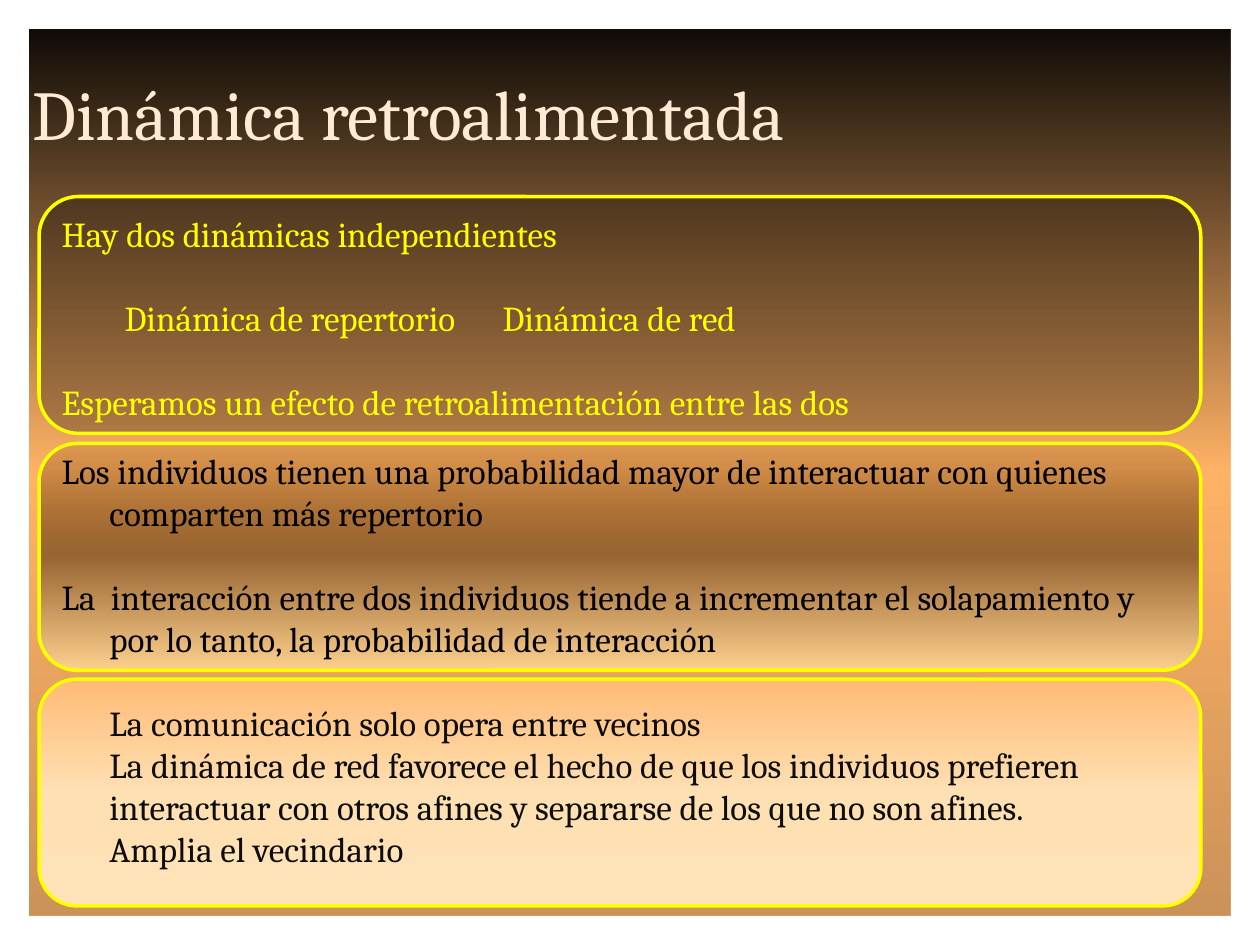
from lxml.etree import SubElement
from pptx import Presentation
from pptx.dml.color import RGBColor
from pptx.enum.shapes import MSO_SHAPE
from pptx.enum.text import MSO_ANCHOR
from pptx.oxml.ns import qn
from pptx.util import Emu, Pt

WIDTH, HEIGHT = 1000, 750
YELLOW, BLACK, INK = "FFFF00", "000000", "0D0D0D"
BACKGROUND = [(0, "000000", 100), (50, "FFB265", 100), (100, "C89058", 100)]
PANELS = [
    ((31, 539, 922, 180), [(0, "FFBA75", 100), (50, "FFE0B3", 100), (100, "FFE2B7", 100)]),
    ((31, 352, 922, 180), [(0, "663300", 13), (50, "996633", 100), (100, "FFD28F", 100)]),
    ((31, 156, 922, 188), [(0, "000000", 26), (100, "000000", 26)]),
]
HANGING, INDENTED = (38, -38), (38, 0)
BODY = [
    ("Hay dos dinámicas independientes", YELLOW, 0, (0, 0)),
    ("\tDinámica de repertorio\tDinámica de red", YELLOW, 24, (0, 0)),
    ("Esperamos un efecto de retroalimentación entre las dos", YELLOW, 24, (0, 0)),
    ("Los individuos tienen una probabilidad mayor de interactuar con quienes "
     "comparten más repertorio", BLACK, 15, HANGING),
    ("La  interacción entre dos individuos tiende a incrementar el solapamiento y "
     "por lo tanto, la probabilidad de interacción", BLACK, 24, HANGING),
    ("La comunicación solo opera entre vecinos", INK, 24, INDENTED),
    ("La dinámica de red favorece el hecho de que los individuos prefieren "
     "interactuar con otros afines y separarse de los que no son afines.", INK, 0, INDENTED),
    ("Amplia el vecindario", INK, 0, INDENTED),
]
TAB_STOPS = (110, 452)


def px(length):
    """Turn px, at 100 to the inch, into EMU."""
    return Emu(length * 9144)


def color(value):
    """Turn a hex string into a colour."""
    return RGBColor.from_string(value)


def apply_format(target, values):
    """Set each attribute named in a dict of format values."""
    for name, value in values.items():
        setattr(target, name, value)


def fill_gradient(fill, element, stops):
    """Fill from top to bottom with (position, colour, opacity) stops."""
    fill.gradient()
    fill.gradient_angle = 270
    stop_list = element.find(".//" + qn("a:gsLst"))
    for stop in list(stop_list):
        stop_list.remove(stop)
    for position, value, opacity in stops:
        stop = SubElement(stop_list, qn("a:gs"), pos=str(position * 1000))
        tint = SubElement(stop, qn("a:srgbClr"), val=value)
        if opacity < 100:
            SubElement(tint, qn("a:alpha"), val=str(opacity * 1000))


def add_box(page, kind, box):
    """Add a preset shape without a shadow."""
    shape = page.shapes.add_shape(kind, *map(px, box))
    shape.shadow.inherit = False
    return shape


def add_panel(page, box, stops):
    """Add a rounded panel with a yellow outline."""
    panel = add_box(page, MSO_SHAPE.ROUNDED_RECTANGLE, box)
    fill_gradient(panel.fill, panel._element, stops)
    panel.line.color.rgb = color(YELLOW)
    panel.line.width = Pt(2)


def add_frame(page, box, thickness):
    """Add white strips along the four edges of a box."""
    left, top, width, height = box
    strips = [
        (left, top, width, thickness),
        (left, top + height - thickness, width, thickness),
        (left, top, thickness, height),
        (left + width - thickness, top, thickness, height),
    ]
    for strip_box in strips:
        strip = add_box(page, MSO_SHAPE.RECTANGLE, strip_box)
        strip.fill.solid()
        strip.fill.fore_color.rgb = color("FFFFFF")
        strip.line.fill.background()


def add_span(para, text, size, value):
    """Add a run of text to a paragraph."""
    span = para.add_run()
    span.text = text
    apply_format(span.font, {"name": "Cambria", "size": Pt(size)})
    span.font.color.rgb = color(value)


def add_text_frame(page, box, anchor):
    """Add a wrapping text box and return its text frame."""
    frame = page.shapes.add_textbox(*map(px, box)).text_frame
    apply_format(frame, {"word_wrap": True, "vertical_anchor": anchor})
    return frame


def add_title(page, box):
    """Add the slide title."""
    frame = add_text_frame(page, box, MSO_ANCHOR.MIDDLE)
    add_span(frame.paragraphs[0], "Dinámica retroalimentada", 40, "FFEAD5")


def add_body(page, box):
    """Add the text that runs over the three panels."""
    frame = add_text_frame(page, box, MSO_ANCHOR.TOP)
    for index, (text, value, space, (margin, indent)) in enumerate(BODY):
        para = frame.add_paragraph() if index else frame.paragraphs[0]
        para.space_before = Pt(space)
        properties = para._p.get_or_add_pPr()
        properties.set("marL", str(px(margin)))
        properties.set("indent", str(px(indent)))
        if "\t" in text:
            tabs = SubElement(properties, qn("a:tabLst"))
            for stop in TAB_STOPS:
                SubElement(tabs, qn("a:tab"), pos=str(px(stop)), algn="l")
        add_span(para, text, 20, value)


def main():
    """Build the slide and save the deck."""
    deck = Presentation()
    apply_format(deck, {"slide_width": px(WIDTH), "slide_height": px(HEIGHT)})
    page = deck.slides.add_slide(deck.slide_layouts[6])
    fill_gradient(page.background.fill, page._element, BACKGROUND)
    for box, stops in PANELS:
        add_panel(page, box, stops)
    add_title(page, (16, 23, 850, 133))
    add_frame(page, (0, 0, WIDTH, HEIGHT), 23)
    add_body(page, (39, 164, 906, 569))
    deck.save("out.pptx")


if __name__ == "__main__":
    main()
